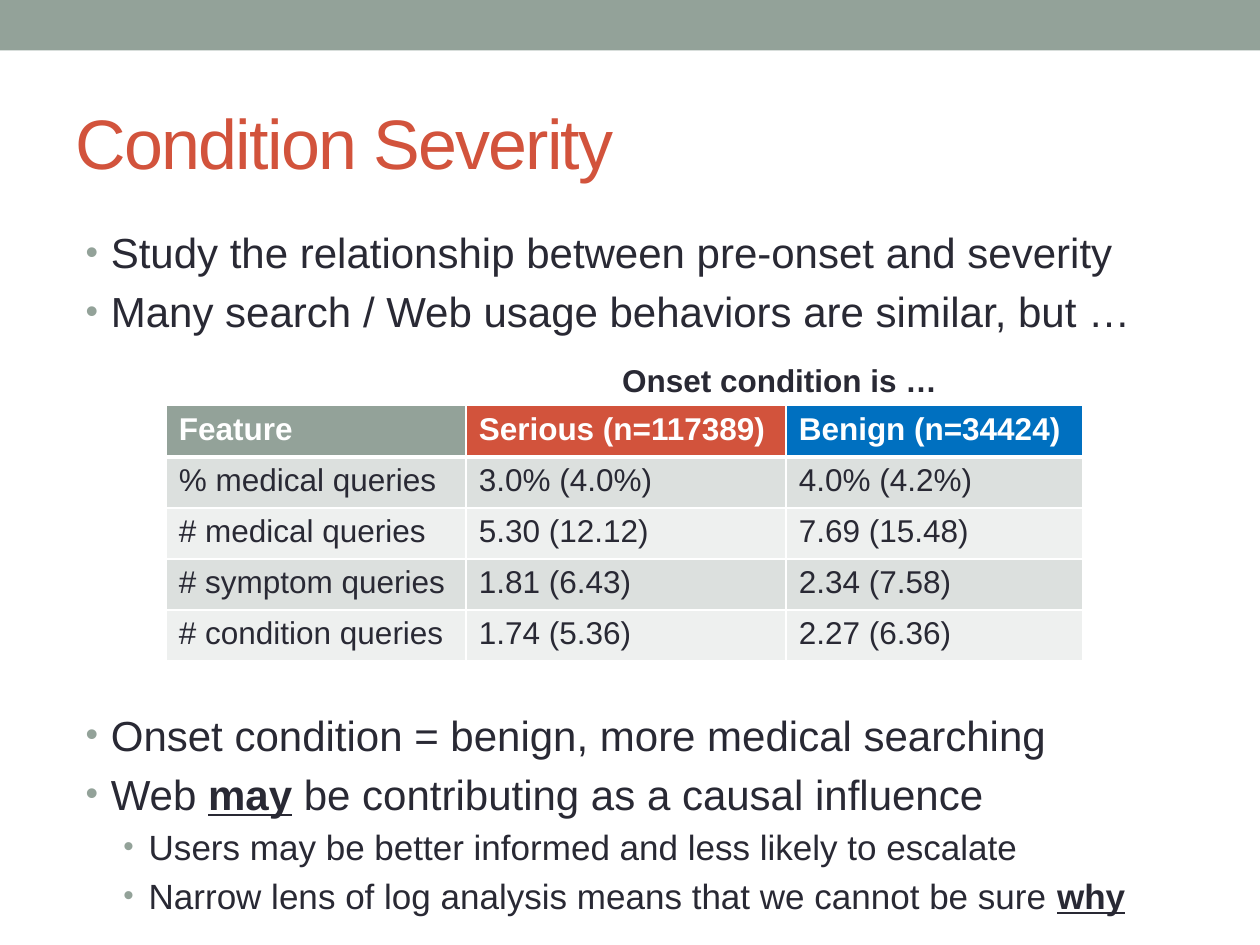
from lxml.etree import SubElement
from pptx import Presentation
from pptx.dml.color import RGBColor
from pptx.enum.shapes import MSO_SHAPE
from pptx.enum.text import MSO_ANCHOR, MSO_AUTO_SIZE, PP_ALIGN
from pptx.oxml.ns import qn
from pptx.util import Pt

COLORS = {
    "sage": "93A299",
    "red": "D2533C",
    "blue": "0070C0",
    "ink": "292934",
    "white": "FFFFFF",
    "band_dark": "DCE0DE",
    "band_light": "EEF0EF",
}
FONT = "Arial"
TWO_CONTENT = 3
LEVEL_SIZES = (24, 20)
LEVEL_INDENTS = (14.4, 36)
HANGING = 14.4


class SlideBuilder:
    """Holds the slide being built and its shared style."""

    def __init__(self, deck):
        self.slide = deck.slides.add_slide(deck.slide_layouts[TWO_CONTENT])

    def color(self, name):
        return RGBColor.from_string(COLORS[name])

    def place(self, shape, box):
        shape.left, shape.top, shape.width, shape.height = map(Pt, box)

    def run(self, paragraph, text, size, color="ink", bold=False, underline=False):
        run = paragraph.add_run()
        run.text = text
        font = run.font
        font.name, font.size = FONT, Pt(size)
        font.bold, font.underline = bold, underline
        font.color.rgb = self.color(color)
        return run

    def bar(self, box, color):
        bar = self.slide.shapes.add_shape(MSO_SHAPE.RECTANGLE, *map(Pt, box))
        bar.shadow.inherit = False
        bar.fill.solid()
        bar.fill.fore_color.rgb = self.color(color)
        bar.line.fill.background()

    def title(self, text, box):
        title = self.slide.shapes.title
        self.place(title, box)
        frame = title.text_frame
        frame.auto_size = MSO_AUTO_SIZE.NONE
        frame.vertical_anchor = MSO_ANCHOR.MIDDLE
        heading = frame.paragraphs[0]
        heading.alignment = PP_ALIGN.LEFT
        run = self.run(heading, text, 40, "red")
        run.font._element.set("spc", "-100")

    def bullet(self, paragraph, level):
        props = paragraph._p.get_or_add_pPr()
        props.set("marL", str(Pt(LEVEL_INDENTS[level])))
        props.set("indent", str(-Pt(HANGING)))
        bullet_color = SubElement(props, qn("a:buClr"))
        SubElement(bullet_color, qn("a:srgbClr"), val=COLORS["sage"])
        SubElement(props, qn("a:buSzPct"), val="85000")
        SubElement(props, qn("a:buFont"), typeface=FONT)
        SubElement(props, qn("a:buChar"), char="•")

    def bullets(self, placeholder_idx, box, items):
        """Fill a body placeholder; each item is (level, pieces), "*" marks emphasis."""
        body = self.slide.placeholders[placeholder_idx]
        self.place(body, box)
        frame = body.text_frame
        frame.auto_size = MSO_AUTO_SIZE.NONE
        for number, (level, pieces) in enumerate(items):
            paragraph = frame.add_paragraph() if number else frame.paragraphs[0]
            paragraph.level = level
            self.bullet(paragraph, level)
            for piece in pieces:
                strong = piece.startswith("*")
                self.run(paragraph, piece.lstrip("*"), LEVEL_SIZES[level],
                         bold=strong, underline=strong)

    def label(self, text, box):
        label = self.slide.shapes.add_textbox(*map(Pt, box))
        label.text_frame.word_wrap = False
        label.text_frame.auto_size = MSO_AUTO_SIZE.SHAPE_TO_FIT_TEXT
        self.run(label.text_frame.paragraphs[0], text, 18, bold=True)

    def borders(self, cell, top, bottom):
        props = cell._tc.get_or_add_tcPr()
        for side, width in (("L", 1), ("R", 1), ("T", top), ("B", bottom)):
            line = SubElement(props, qn(f"a:ln{side}"), w=str(Pt(width)))
            fill = SubElement(line, qn("a:solidFill"))
            SubElement(fill, qn("a:srgbClr"), val=COLORS["white"])

    def table(self, left, top, widths, row_height, header_fills, rows):
        table = self.slide.shapes.add_table(
            len(rows), len(widths), Pt(left), Pt(top),
            Pt(sum(widths)), Pt(row_height * len(rows))).table
        for column, width in zip(table.columns, widths):
            column.width = Pt(width)
        for r, texts in enumerate(rows):
            table.rows[r].height = Pt(row_height)
            header = r == 0
            band = "band_dark" if r % 2 else "band_light"
            for c, text in enumerate(texts):
                cell = table.cell(r, c)
                self.borders(cell, top=3 if r == 1 else 1, bottom=3 if header else 1)
                cell.fill.solid()
                cell.fill.fore_color.rgb = self.color(header_fills[c] if header else band)
                self.run(cell.text_frame.paragraphs[0], text, 18,
                         "white" if header else "ink", bold=header)


def main():
    deck = Presentation()
    deck.slide_width, deck.slide_height = Pt(720), Pt(540)

    page = SlideBuilder(deck)
    page.bar((0, 0, 720, 28.8), "sage")
    page.title("Condition Severity", (36, 41.76, 648, 77.76))
    page.bullets(1, (41.76, 126, 617.76, 105.84), [
        (0, ["Study the relationship between pre-onset and severity"]),
        (0, ["Many search / Web usage behaviors are similar, but …"]),
    ])
    page.label("Onset condition is …", (348.48, 203.04, 196.56, 28.8))
    page.table(95.04, 231.84, (171.36, 182.88, 169.2), 29.2, ("sage", "red", "blue"), [
        ("Feature", "Serious (n=117389)", "Benign (n=34424)"),
        ("% medical queries", "3.0% (4.0%)", "4.0% (4.2%)"),
        ("# medical queries", "5.30 (12.12)", "7.69 (15.48)"),
        ("# symptom queries", "1.81 (6.43)", "2.34 (7.58)"),
        ("# condition queries", "1.74 (5.36)", "2.27 (6.36)"),
    ])
    page.bullets(2, (41.76, 401.76, 642.24, 131.76), [
        (0, ["Onset condition = benign, more medical searching"]),
        (0, ["Web ", "*may", " be contributing as a causal influence"]),
        (1, ["Users may be better informed and less likely to escalate"]),
        (1, ["Narrow lens of log analysis means that we cannot be sure ", "*why"]),
    ])
    deck.save("out.pptx")


if __name__ == "__main__":
    main()
